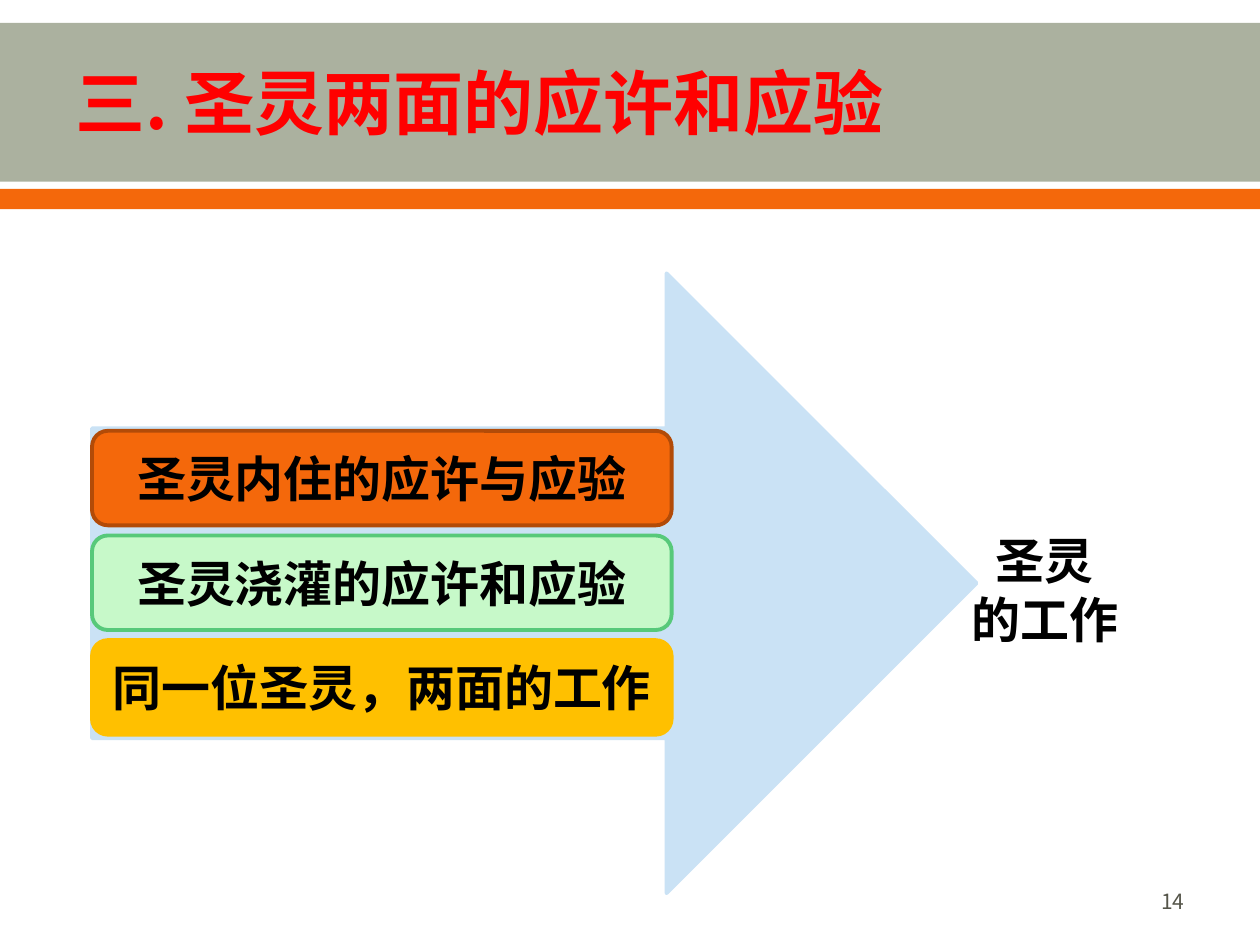
from lxml import etree
from pptx import Presentation
from pptx.dml.color import RGBColor
from pptx.enum.shapes import MSO_SHAPE
from pptx.enum.text import MSO_ANCHOR, MSO_AUTO_SIZE, PP_ALIGN
from pptx.oxml.ns import qn
from pptx.util import Pt

COLORS = {
    "band": "ABB19F", "orange": "F4680B", "rust": "B24B08",
    "mint": "C7F9C9", "green": "57C97A", "gold": "FFC000",
    "sky": "CAE2F5", "red": "FF0000", "black": "000000", "grey": "55554A",
}
LABEL = {"size": Pt(28), "bold": True}


class SlideBuilder:
    font_name = "Noto Sans CJK SC"
    line_width = Pt(2.22)

    def __init__(self, slide):
        self.slide = slide

    def set_text(self, shape, lines, color, align, **formats):
        frame = shape.text_frame
        settings = {"word_wrap": True, "auto_size": MSO_AUTO_SIZE.NONE,
                    "vertical_anchor": MSO_ANCHOR.MIDDLE}
        for name, value in settings.items():
            setattr(frame, name, value)
        frame.text = "\n".join(lines)
        for paragraph in frame.paragraphs:
            paragraph.alignment = align
            for run in paragraph.runs:
                for name, value in {"name": self.font_name, **formats}.items():
                    setattr(run.font, name, value)
                run.font.color.rgb = RGBColor.from_string(COLORS[color])
                latin = run._r.find(qn("a:rPr")).find(qn("a:latin"))
                east_asian = etree.Element(qn("a:ea"), typeface=self.font_name)
                latin.addnext(east_asian)

    def title(self, text, box):
        title = self.slide.shapes.title
        for name, value in zip(("left", "top", "width", "height"), box):
            setattr(title, name, Pt(value))
        self.set_text(title, [text], "red", PP_ALIGN.LEFT,
                      size=Pt(40), bold=True)

    def text(self, lines, box, color, align, **formats):
        text_box = self.slide.shapes.add_textbox(*map(Pt, box))
        self.set_text(text_box, lines, color, align, **formats)

    def shape(self, kind, box, fill, line=None):
        shape = self.slide.shapes.add_shape(kind, *map(Pt, box))
        shape.shadow.inherit = False
        shape.fill.solid()
        shape.fill.fore_color.rgb = RGBColor.from_string(COLORS[fill])
        if line:
            shape.line.color.rgb = RGBColor.from_string(COLORS[line])
            shape.line.width = self.line_width
        else:
            shape.line.fill.background()
        return shape

    def card(self, text, box, fill, line):
        card = self.shape(MSO_SHAPE.ROUNDED_RECTANGLE, box, fill, line)
        self.set_text(card, [text], "black", PP_ALIGN.CENTER, **LABEL)

    def bring_title_forward(self):
        """Place the title above the bands drawn so far."""
        self.slide.shapes._spTree.append(self.slide.shapes.title._element)


def main():
    presentation = Presentation()
    presentation.slide_width, presentation.slide_height = Pt(720), Pt(540)
    slide = presentation.slides.add_slide(presentation.slide_layouts[5])
    builder = SlideBuilder(slide)

    builder.shape(MSO_SHAPE.RECTANGLE, (0, 13, 720, 90.8), "band")
    builder.shape(MSO_SHAPE.RECTANGLE, (0, 108, 720, 11.5), "orange")
    builder.text(["14"], (516.2, 500.4, 167.8, 28.8), "grey",
                 PP_ALIGN.RIGHT, size=Pt(12))
    builder.bring_title_forward()
    builder.title("三. 圣灵两面的应许和应验", (36, 30.2, 577.4, 55.4))

    left = 52.6
    builder.shape(MSO_SHAPE.RIGHT_ARROW, (left, 156.2, 505.4, 354.2),
                  "sky", "sky")
    builder.text(["圣灵", "的工作"], (545.8, 293.8, 102.2, 85.7), "black",
                 PP_ALIGN.CENTER, **LABEL)

    cards = [
        ("圣灵内住的应许与应验", "orange", "rust"),
        ("圣灵浇灌的应许和应验", "mint", "green"),
        ("同一位圣灵，两面的工作", "gold", "gold"),
    ]
    top, pitch = 246.2, 59.8
    for index, (text, fill, line) in enumerate(cards):
        box = (left, top + index * pitch, 331.2, 54)
        builder.card(text, box, fill, line)

    presentation.save("out.pptx")


if __name__ == "__main__":
    main()
